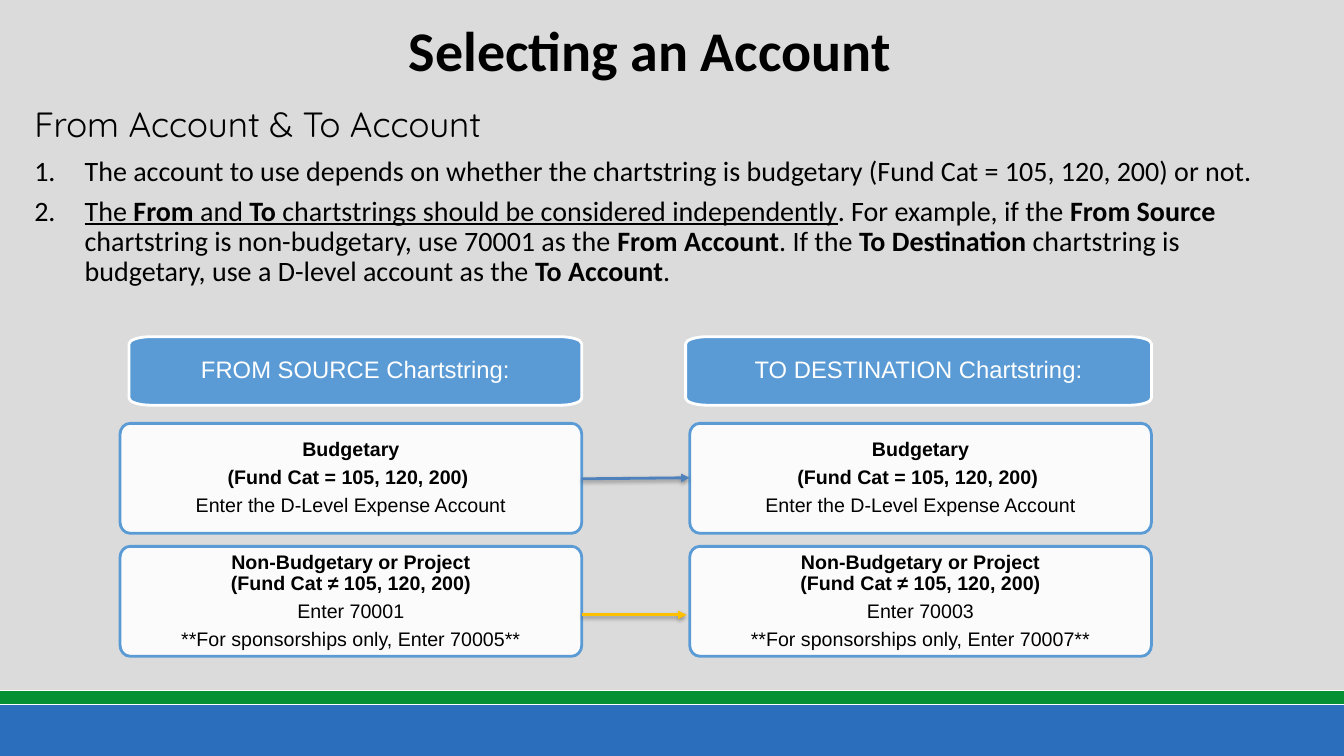
from lxml.etree import SubElement
from pptx import Presentation
from pptx.dml.color import RGBColor
from pptx.enum.shapes import MSO_CONNECTOR, MSO_SHAPE
from pptx.enum.text import MSO_ANCHOR, MSO_AUTO_SIZE, PP_ALIGN
from pptx.oxml.ns import qn
from pptx.util import Inches, Pt

# Content: runs are (text, style), where style holds b for bold and u for underline
TITLE = "Selecting an Account"
HEADING = "From Account & To Account"
RULES = [
    [("The account to use depends on whether the chartstring is budgetary "
      "(Fund Cat = 105, 120, 200) or not.", "")],
    [("The ", "u"), ("From", "bu"), (" and ", "u"), ("To", "bu"),
     (" chartstrings should be considered independently", "u"),
     (". For example, if the ", ""), ("From Source", "b"),
     (" chartstring is non-budgetary, use 70001 as the ", ""), ("From Account", "b"),
     (". If the ", ""), ("To Destination", "b"),
     (" chartstring is budgetary, use a D-level account as the ", ""),
     ("To Account", "b"), (".", "")],
]
BUDGETARY = [("Budgetary", "b"), ("(Fund Cat = 105, 120, 200) ", "b"),
             ("Enter the D-Level Expense Account", "")]
NON_BUDGETARY = "Non-Budgetary or Project\n(Fund Cat ≠ 105, 120, 200)"
# Column: heading, heading left, box left, account, sponsorship account
COLUMNS = [
    ("FROM SOURCE Chartstring:", 1.28, 1.19, "70001", "70005"),
    ("TO DESTINATION Chartstring:", 6.8, 6.84, "70003", "70007"),
]
# Arrow: start, end, colour
ARROWS = [
    ((5.77, 6.1), (6.81, 6.1), "gold"),
    ((5.77, 4.75), (6.84, 4.74), "steel"),
]
COLORS = {
    "background": "DBDBDB", "band": "2A6EBC", "stripe": "059033", "white": "FFFFFF",
    "black": "000000", "blue": "5B9BD5", "gold": "FFC000", "steel": "4F81BD",
}
HEADER_TOP, HEADER_HEIGHT, HEADER_CORNER = 3.34, 0.68, (0.22, 0.07)
BOX_TOPS, BOX_WIDTH, BOX_HEIGHT, BOX_CORNER = (4.2, 5.42), 4.58, 1.09, (0.1, 0.11)
CURVE = 0.45  # distance of a curve handle from its corner, as a share of the radius


def color(name):
    return RGBColor.from_string(COLORS[name])


def add_runs(paragraph, runs, size, font, color_name="black"):
    for text, style in runs:
        for index, line in enumerate(text.split("\n")):
            if index:
                paragraph.add_line_break()
            run = paragraph.add_run()
            run.text = line
            formats = {"size": Pt(size), "name": font, "bold": "b" in style,
                       "underline": "u" in style}
            for name, value in formats.items():
                setattr(run.font, name, value)
            run.font.color.rgb = color(color_name)


def space(paragraph, size, alignment=PP_ALIGN.LEFT):
    formats = {"line_spacing": 0.9, "space_before": Pt(0),
               "space_after": Pt(0.35 * size), "alignment": alignment}
    for name, value in formats.items():
        setattr(paragraph, name, value)


def set_frame(frame, anchor, horizontal, vertical):
    formats = {"word_wrap": True, "auto_size": MSO_AUTO_SIZE.NONE, "vertical_anchor": anchor,
               "margin_left": Inches(horizontal), "margin_right": Inches(horizontal),
               "margin_top": Inches(vertical), "margin_bottom": Inches(vertical)}
    for name, value in formats.items():
        setattr(frame, name, value)


def add_rounded_outline(left, top, width, height, corner):
    """Freeform whose four corners are one curve each, clockwise from top left."""
    radius_x, radius_y = corner
    right, bottom = left + width, top + height
    points = []
    for x, y, inward_x, inward_y, starts_upright in [
            (left, top, 1, 1, True), (right, top, -1, 1, False),
            (right, bottom, -1, -1, True), (left, bottom, 1, -1, False)]:
        upright = [(x, y + inward_y * radius_y * share) for share in (1, CURVE)]
        level = [(x + inward_x * radius_x * share, y) for share in (CURVE, 1)]
        curve = upright + level
        points += curve if starts_upright else curve[::-1]
    points = [(Inches(x), Inches(y)) for x, y in points]
    builder = slide.shapes.build_freeform(*points[0])
    builder.add_line_segments(points[1:], close=True)
    shape = builder.convert_to_shape()
    # Join the three segments of each corner into one curve
    segments = list(shape._element.iter(qn("a:lnTo")))
    for first in range(0, len(segments), 4):
        curve = segments[first].makeelement(qn("a:cubicBezTo"))
        segments[first].addprevious(curve)
        for segment in segments[first:first + 3]:
            curve.append(segment[0])
            segment.getparent().remove(segment)
    return shape


def add_card(left, top, width, height, corner, fill, line, lines, size, text_color):
    shape = add_rounded_outline(left, top, width, height, corner)
    shape.shadow.inherit = False
    shape.fill.solid()
    shape.fill.fore_color.rgb = color(fill)
    shape.line.color.rgb = color(line)
    shape.line.width = Pt(2)
    frame = shape.text_frame
    set_frame(frame, MSO_ANCHOR.MIDDLE, 0.06, 0.05)
    for index, run in enumerate(lines):
        paragraph = frame.add_paragraph() if index else frame.paragraphs[0]
        space(paragraph, size, PP_ALIGN.CENTER)
        add_runs(paragraph, [run], size, "Arial", text_color)
    return shape


def add_arrow(start, end, color_name):
    points = [Inches(value) for value in start + end]
    arrow = slide.shapes.add_connector(MSO_CONNECTOR.STRAIGHT, *points)
    arrow.line.color.rgb = color(color_name)
    arrow.line.width = Pt(2)
    SubElement(arrow.line._get_or_add_ln(), qn("a:tailEnd"), type="triangle")
    effects = SubElement(arrow._element.spPr, qn("a:effectLst"))
    shadow = SubElement(effects, qn("a:outerShdw"), blurRad=str(Pt(3.1)), dist=str(Pt(1.6)),
                        dir="5400000", rotWithShape="0")
    shade = SubElement(shadow, qn("a:srgbClr"), val=COLORS["black"])
    SubElement(shade, qn("a:alpha"), val="38000")


presentation = Presentation()
presentation.slide_width = Inches(13.33)
presentation.slide_height = Inches(7.5)
slide = presentation.slides.add_slide(presentation.slide_layouts[5])
slide.background.fill.solid()
slide.background.fill.fore_color.rgb = color("background")

# Footer bands
for left, top, width, height, fill in [(0, 6.99, 13.33, 0.51, "band"),
                                       (-0.09, 6.85, 13.51, 0.14, "stripe")]:
    bar = slide.shapes.add_shape(MSO_SHAPE.RECTANGLE, Inches(left), Inches(top),
                                 Inches(width), Inches(height))
    bar.shadow.inherit = False
    bar.fill.solid()
    bar.fill.fore_color.rgb = color(fill)
    if fill == "stripe":
        bar.line.color.rgb = color("white")
        bar.line.width = Pt(1)
    else:
        bar.line.fill.background()

# Title
title = slide.shapes.title
title.left, title.top, title.width, title.height = map(Inches, (-0.22, 0.1, 13.33, 0.77))
set_frame(title.text_frame, MSO_ANCHOR.TOP, 0.1, 0.05)
title.text_frame.paragraphs[0].alignment = PP_ALIGN.CENTER
add_runs(title.text_frame.paragraphs[0], [(TITLE, "b")], 40, "Calibri")

# Heading and numbered rules
body = slide.shapes.add_textbox(Inches(0.15), Inches(0.87), Inches(12.96), Inches(5.52))
set_frame(body.text_frame, MSO_ANCHOR.TOP, 0.19, 0.19)
heading = body.text_frame.paragraphs[0]
space(heading, 25)
add_runs(heading, [(HEADING, "")], 25, "Quicksand")
for rule in RULES:
    paragraph = body.text_frame.add_paragraph()
    space(paragraph, 20)
    properties = paragraph._p.get_or_add_pPr()
    properties.set("marL", str(Inches(0.5)))
    properties.set("indent", str(Inches(-0.5)))
    SubElement(properties, qn("a:buFont"), typeface="+mj-lt")
    SubElement(properties, qn("a:buAutoNum"), type="arabicPeriod")
    add_runs(paragraph, rule, 20, "Calibri")

# Columns of cards: each heading ends at the right edge of its boxes
for label, header_left, box_left, account, sponsorship in COLUMNS:
    right = box_left + BOX_WIDTH
    add_card(header_left, HEADER_TOP, right - header_left, HEADER_HEIGHT, HEADER_CORNER,
             "blue", "white", [(label, "")], 17, "white")
    non_budgetary = [(NON_BUDGETARY, "b"), (f"Enter {account}", ""),
                     (f"**For sponsorships only, Enter {sponsorship}**", "")]
    for top, lines in zip(BOX_TOPS, (BUDGETARY, non_budgetary)):
        box = add_card(box_left, top, BOX_WIDTH, BOX_HEIGHT, BOX_CORNER,
                       "white", "blue", lines, 14, "black")
        fill_color = box._element.spPr.find(qn("a:solidFill"))[0]
        SubElement(fill_color, qn("a:alpha"), val="90000")

# Arrows
for arrow in ARROWS:
    add_arrow(*arrow)

presentation.save("out.pptx")
